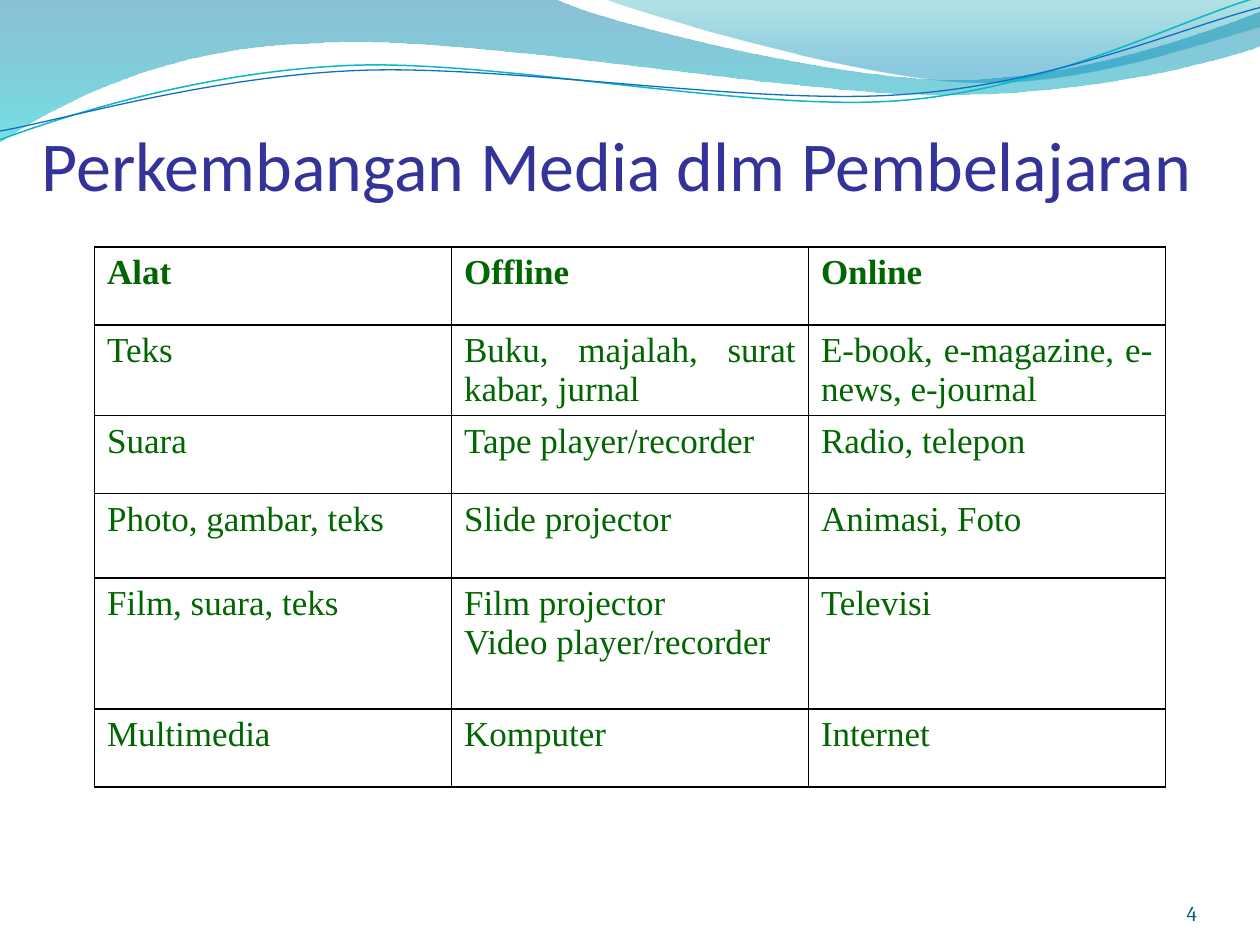
from lxml import etree
from pptx import Presentation
from pptx.dml.color import RGBColor
from pptx.enum.text import MSO_ANCHOR as Anchor, PP_ALIGN as Align
from pptx.oxml.ns import qn
from pptx.util import Inches, Pt

COLORS = {
    "title": "333399", "cell": "006600", "border": "000000", "number": "045D75",
    "band_top": "0074A1", "band_bottom": "00C6CF",
    "wave_top": "00A1A9", "wave_bottom": "008BBF",
    "teal_line": "0AB8BF", "blue_line": "0F6FC6",
}
BAND = [
    (0, 0), (4.4, -0.01),
    (4.76, 0.17, 6.64, 0.63, 7.58, 0.63), (8.53, 0.63, 9.58, 0.26, 10, 0.09),
    (10.01, 0.36),
    (9.83, 0.44, 8.7, 0.76, 7.46, 0.75), (6.22, 0.75, 3.82, 0.28, 2.57, 0.34),
    (1.29, 0.36, 0.46, 0.83, -0.01, 1.13),
]
WAVE = [
    (4.79, -0.01),
    (5.09, 0.11, 6.82, 0.62, 7.69, 0.65), (8.56, 0.69, 9.61, 0.32, 10, 0.21),
    (10, 0),
]
TEAL_CURVE = [
    (0, 1.11), (0.48, 0.93, 1.58, 0.57, 2.77, 0.52),
    (3.95, 0.47, 5.93, 0.89, 7.13, 0.8), (8.33, 0.71, 9.38, 0.15, 9.98, -0.02),
]
BLUE_CURVE = [
    (0, 1.04), (0.47, 0.96, 1.64, 0.61, 2.83, 0.56),
    (4.03, 0.51, 5.97, 0.84, 7.17, 0.75), (8.36, 0.67, 9.41, 0.21, 10, 0.06),
]
MEDIA = [
    ("Alat", "Offline", "Online"),
    ("Teks", "Buku, majalah, surat kabar, jurnal", "E-book, e-magazine, e-news, e-journal"),
    ("Suara", "Tape player/recorder", "Radio, telepon"),
    ("Photo, gambar, teks", "Slide projector", "Animasi, Foto"),
    ("Film, suara, teks", "Film projector\nVideo player/recorder", "Televisi"),
    ("Multimedia", "Komputer", "Internet"),
]
ROW_HEIGHTS = [0.62, 0.62, 0.62, 0.67, 1.04, 0.62]


def color(name):
    return RGBColor.from_string(COLORS[name])


def bend_segments(shape, segments):
    lines = list(shape._element.spPr.iter(qn("a:lnTo")))
    for line, segment in zip(lines, segments):
        if len(segment) == 2:
            continue
        curve = etree.Element(qn("a:cubicBezTo"))
        for x, y in zip(segment[::2], segment[1::2]):
            etree.SubElement(curve, qn("a:pt"),
                             x=str(Inches(x) - shape.left), y=str(Inches(y) - shape.top))
        line.getparent().replace(line, curve)


def add_outline(page, segments, close):
    anchors = [tuple(map(Inches, segment[-2:])) for segment in segments]
    builder = page.shapes.build_freeform(*anchors[0])
    builder.add_line_segments(anchors[1:], close=close)
    shape = builder.convert_to_shape()
    bend_segments(shape, segments[1:])
    shape.shadow.inherit = False
    return shape


def add_gradient_area(page, segments, stops):
    shape = add_outline(page, segments, True)
    shape.line.fill.background()
    shape.fill.gradient()
    shape.fill.gradient_angle = 270
    for stop, (position, name, _) in zip(shape.fill.gradient_stops, stops):
        stop.position = position
        stop.color.rgb = color(name)
    for tint, (_, _, opacity) in zip(shape._element.spPr.iter(qn("a:srgbClr")), stops):
        etree.SubElement(tint, qn("a:alpha"), val=str(opacity * 1000))


def add_curve(page, segments, name, width):
    shape = add_outline(page, segments, False)
    shape.fill.background()
    shape.line.color.rgb = color(name)
    shape.line.width = Pt(width)


def add_span(para, text, size, font, name, bold=False):
    span = para.add_run()
    span.text = text
    span.font.size = Pt(size)
    span.font.name = font
    span.font.bold = bold
    span.font.color.rgb = color(name)


def add_text(page, place, text, size, font, name, align):
    box = page.shapes.add_textbox(*map(Inches, place))
    frame = box.text_frame
    frame.word_wrap = True
    frame.vertical_anchor = Anchor.BOTTOM
    frame.margin_left = frame.margin_right = frame.margin_top = frame.margin_bottom = 0
    para = frame.paragraphs[0]
    para.alignment = align
    add_span(para, text, size, font, name)


def add_borders(cell):
    props = cell._tc.get_or_add_tcPr()
    for side in ("lnL", "lnR", "lnT", "lnB"):
        line = etree.SubElement(props, qn(f"a:{side}"), w=str(Pt(1)))
        fill = etree.SubElement(line, qn("a:solidFill"))
        etree.SubElement(fill, qn("a:srgbClr"), val=COLORS["border"])


def fill_cell(cell, text, header, hanging, spaced):
    add_borders(cell)
    cell.fill.background()
    cell.margin_bottom = 0
    frame = cell.text_frame
    for index, line in enumerate(text.split("\n")):
        para = frame.add_paragraph() if index else frame.paragraphs[0]
        para.alignment = Align.LEFT if spaced else Align.JUSTIFY
        if spaced:
            para.space_before = Pt(4)
        if hanging:
            props = para._p.get_or_add_pPr()
            props.set("marL", str(Inches(0.38)))
            props.set("indent", str(-Inches(0.38)))
        add_span(para, line, 20, "Times New Roman", "cell", header)


def add_media_table(page):
    frame = page.shapes.add_table(
        len(MEDIA), 3, Inches(0.75), Inches(1.96), Inches(8.5), Inches(sum(ROW_HEIGHTS)))
    table = frame.table
    table.first_row = table.horz_banding = False
    for row, height in zip(table.rows, ROW_HEIGHTS):
        row.height = Inches(height)
    for r, texts in enumerate(MEDIA):
        for c, text in enumerate(texts):
            spaced = (r, c) == (3, 2)
            fill_cell(table.cell(r, c), text, r == 0, r != 1 and not spaced, spaced)


def main():
    deck = Presentation()
    deck.slide_width, deck.slide_height = Inches(10), Inches(7.5)
    page = deck.slides.add_slide(deck.slide_layouts[6])
    add_gradient_area(page, BAND, [(0, "band_top", 45), (1, "band_bottom", 55)])
    add_gradient_area(page, WAVE, [(0, "wave_top", 30), (0.8, "wave_bottom", 45)])
    add_curve(page, TEAL_CURVE, "teal_line", 0.85)
    add_curve(page, BLUE_CURVE, "blue_line", 0.75)
    add_text(page, (0.33, 0.38, 9.33, 1.25), "Perkembangan Media dlm Pembelajaran",
             40, "Calibri", "title", Align.LEFT)
    add_media_table(page)
    add_text(page, (8.67, 6.95, 0.83, 0.4), "4", 12, "Cambria", "number", Align.RIGHT)
    deck.save("out.pptx")


if __name__ == "__main__":
    main()
